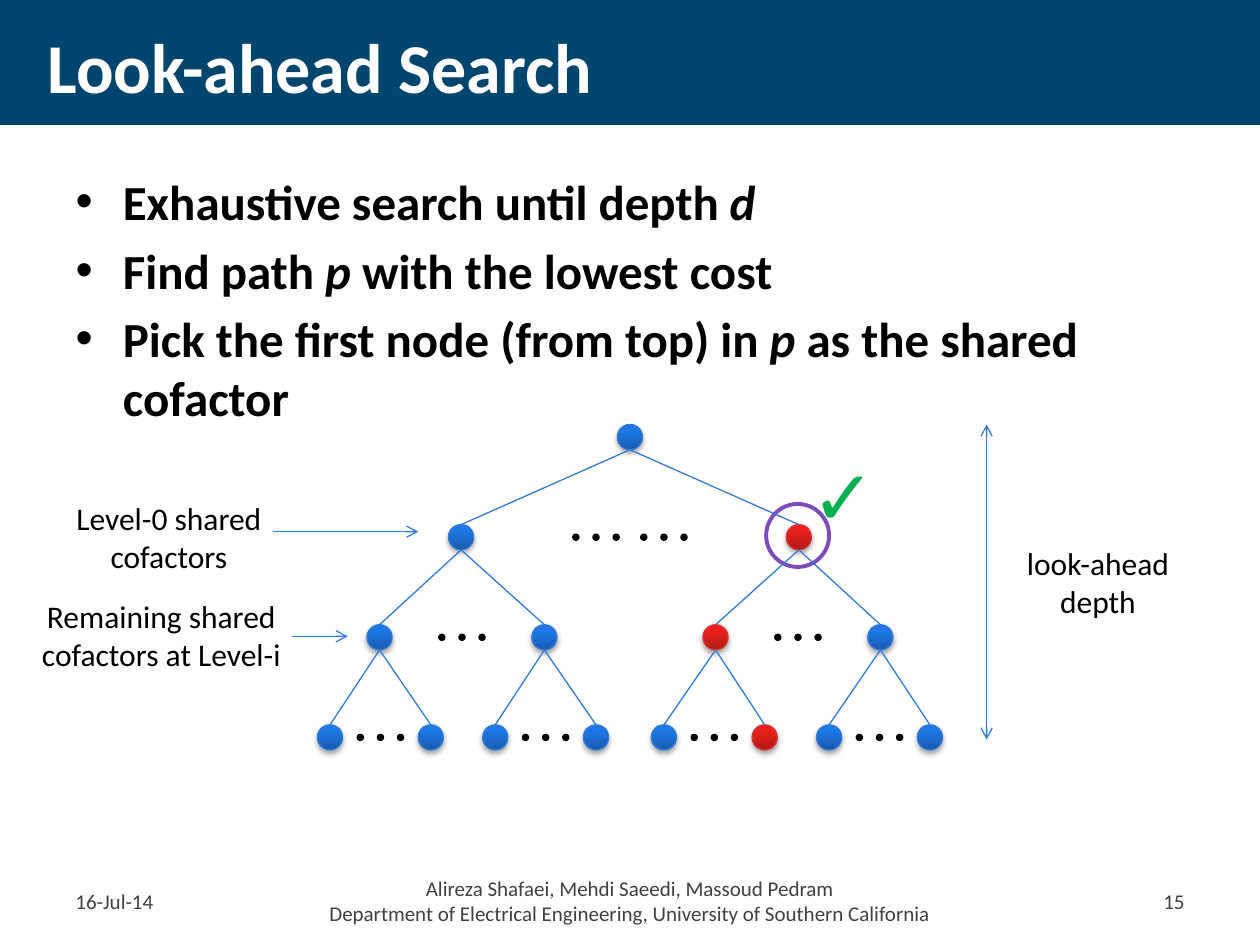
from lxml.etree import SubElement
from pptx import Presentation
from pptx.dml.color import RGBColor as RGB
from pptx.enum.shapes import MSO_CONNECTOR as Conn, MSO_SHAPE as Kind
from pptx.enum.text import MSO_ANCHOR as Anchor, MSO_AUTO_SIZE as Auto, PP_ALIGN as Align
from pptx.oxml import parse_xml
from pptx.oxml.ns import nsdecls, qn
from pptx.util import Pt

HUE = {"band": "00456E", "white": "FFFFFF", "black": "000000", "gray": "404040",
       "line": "327BD4", "edge": "D73531", "ring": "7E4CBA", "tick": "00B050"}
BLUE = ("175CB1", "1E78E5", "1B78EA")
RED = ("B31A16", "E9221D", "EE1E19")

deck = Presentation()
deck.slide_width, deck.slide_height = Pt(720), Pt(540)
slide = deck.slides.add_slide(deck.slide_layouts[1])
shapes = slide.shapes


def write(para, text, size, hue, bold=False, slant=False):
    run = para.add_run()
    run.text = text
    font = run.font
    font.name, font.size, font.bold, font.italic = "Calibri", Pt(size), bold, slant
    font.color.rgb = RGB.from_string(HUE[hue])


def link(x1, y1, x2, y2, ends=()):
    wire = shapes.add_connector(Conn.STRAIGHT, Pt(x1), Pt(y1), Pt(x2), Pt(y2))
    wire.line.color.rgb = RGB.from_string(HUE["line"])
    wire.line.width = Pt(0.75)
    for end in ends:
        SubElement(wire.line._get_or_add_ln(), qn("a:" + end), type="arrow")
    SubElement(wire.element.spPr, qn("a:effectLst"))


band = shapes.add_shape(Kind.RECTANGLE, 0, 0, Pt(720), Pt(71.4))
band.shadow.inherit = False
band.fill.solid()
band.fill.fore_color.rgb = RGB.from_string(HUE["band"])
band.line.fill.background()
band.element.getparent().insert(2, band.element)

title, body = shapes.title, slide.placeholders[1]
title.left, title.top, title.width, title.height = Pt(20), Pt(7.2), Pt(680.4), Pt(60.5)
body.left, body.top, body.width, body.height = Pt(36), Pt(94.3), Pt(648), Pt(390.2)
for holder in (title, body):
    holder.text_frame.auto_size = Auto.NONE
title.text_frame.word_wrap = False
title.text_frame.vertical_anchor = Anchor.MIDDLE
head = title.text_frame.paragraphs[0]
head.alignment = Align.LEFT
write(head, "Look-ahead Search", 40, "white", bold=True)

points = [("Exhaustive search until depth ", "d"),
          ("Find path ", "p", " with the lowest cost"),
          ("Pick the first node (from top) in ", "p", " as the shared cofactor")]
for i, parts in enumerate(points):
    para = body.text_frame.add_paragraph() if i else body.text_frame.paragraphs[0]
    for j, part in enumerate(parts):
        write(para, part, 28, "black", bold=True, slant=j == 1)

rows = [[360],
        [263.5, 456.5],
        [216.9, 311.1, 408.9, 503.1],
        [188.6, 246.2, 283, 340.6, 379.4, 437, 473.8, 531.4]]
reds = {(1, 1), (2, 2), (3, 5)}
top, step, rad, dot, gap = 249.8, 57.2, 7.2, 2.2, 11.5

ring = shapes.add_shape(Kind.FLOWCHART_CONNECTOR, Pt(437.8), Pt(288), Pt(36), Pt(36))
ring.shadow.inherit = False
ring.fill.solid()
ring.fill.fore_color.rgb = RGB.from_string(HUE["white"])
ring.line.color.rgb = RGB.from_string(HUE["ring"])
ring.line.width = Pt(2.25)

for level, row in enumerate(rows):
    y = top + level * step
    for i, x in enumerate(row):
        red = (level, i) in reds
        node = shapes.add_shape(Kind.FLOWCHART_CONNECTOR, Pt(x - rad), Pt(y - rad),
                                Pt(2 * rad), Pt(2 * rad))
        node.line.color.rgb = RGB.from_string(HUE["edge" if red else "line"])
        node.line.width = Pt(0.75)
        stops = "".join(f'<a:gs pos="{pos}"><a:srgbClr val="{tone}"/></a:gs>'
                        for pos, tone in zip((0, 80000, 100000), RED if red else BLUE))
        props = node.element.spPr
        props.insert(2, parse_xml(
            f'<a:gradFill {nsdecls("a")} rotWithShape="1"><a:gsLst>{stops}</a:gsLst>'
            '<a:lin ang="16200000" scaled="0"/></a:gradFill>'))
        props.append(parse_xml(
            f'<a:effectLst {nsdecls("a")}><a:outerShdw blurRad="{Pt(3.1)}" '
            f'dist="{Pt(1.8)}" dir="5400000" rotWithShape="0"><a:srgbClr val="000000">'
            '<a:alpha val="35000"/></a:srgbClr></a:outerShdw></a:effectLst>'))
    for left, right in zip(row[::2], row[1::2]):
        mid = (left + right) / 2
        for core in (mid - 19.4, mid + 19.4) if level == 1 else (mid,):
            for k in (-1, 0, 1):
                spot = shapes.add_shape(Kind.FLOWCHART_CONNECTOR,
                                        Pt(core + k * gap - dot / 2), Pt(y - dot / 2),
                                        Pt(dot), Pt(dot))
                spot.shadow.inherit = False
                spot.fill.solid()
                spot.fill.fore_color.rgb = RGB.from_string(HUE["black"])
                spot.line.color.rgb = RGB.from_string(HUE["black"])
                spot.line.width = Pt(2)

for level, row in enumerate(rows[1:]):
    y = top + level * step
    for i, x in enumerate(row):
        link(rows[level][i // 2], y + rad, x, y + step - rad)

link(563.8, 242.6, 563.8, 422.6, ("headEnd", "tailEnd"))
link(156.2, 303.8, 239, 303.8, ("tailEnd",))
link(167, 363.6, 198.7, 363.6, ("tailEnd",))

mid, low = Anchor.MIDDLE, Anchor.TOP
notes = [
    (14.4, 281.5, 164.2, 51, ["Level-0 shared cofactors"], 18, "black", Align.CENTER, low),
    (5.8, 337.7, 172.8, 51, ["Remaining shared cofactors at Level-i"], 18, "black",
     Align.CENTER, low),
    (577.4, 307.4, 100.1, 51, ["look-ahead depth"], 18, "black", Align.CENTER, low),
    (456.5, 252.7, 49, 60.5, ["✓"], 44, "tick", Align.LEFT, low),
    (36, 500.4, 85.7, 28.8, ["16-Jul-14"], 12, "gray", Align.LEFT, mid),
    (598.3, 500.4, 85.7, 28.8, ["15"], 12, "gray", Align.RIGHT, mid),
    (133.2, 500.4, 453.6, 28.8,
     ["Alireza Shafaei, Mehdi Saeedi, Massoud Pedram",
      "Department of Electrical Engineering, University of Southern California"],
     12, "gray", Align.CENTER, mid)]
for x, y, w, h, lines, size, hue, align, anchor in notes:
    frame = shapes.add_textbox(Pt(x), Pt(y), Pt(w), Pt(h)).text_frame
    frame.word_wrap = hue != "tick"
    frame.vertical_anchor = anchor
    for i, text in enumerate(lines):
        para = frame.add_paragraph() if i else frame.paragraphs[0]
        para.alignment = align
        write(para, text, size, hue, bold=hue == "tick")

deck.save("out.pptx")
